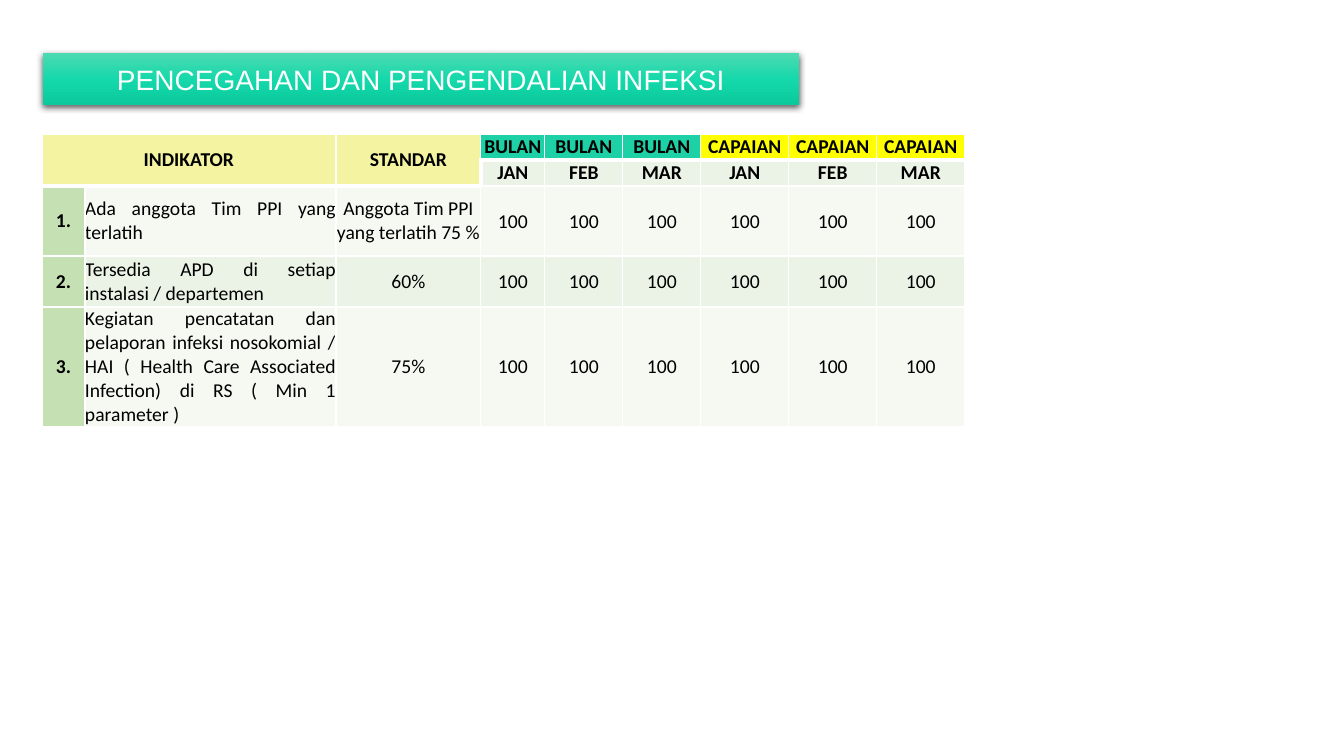
from dataclasses import dataclass
from typing import Any

import lxml.etree
import pptx
import pptx.dml.color
import pptx.enum.text
import pptx.oxml
import pptx.oxml.ns
import pptx.util

RGBColor = pptx.dml.color.RGBColor
Align = pptx.enum.text.PP_ALIGN
Anchor = pptx.enum.text.MSO_ANCHOR

EMU_PER_PX = 914400 / 100.8

WHITE = RGBColor(0xFF, 0xFF, 0xFF)
BLACK = RGBColor(0x00, 0x00, 0x00)
PALE_YELLOW = RGBColor(0xF3, 0xF3, 0xA1)
TEAL = RGBColor(0x1E, 0xD0, 0xA6)
YELLOW = RGBColor(0xFF, 0xFF, 0x00)
LIGHT_GREEN = RGBColor(0xEA, 0xF3, 0xE5)
PALE_GREEN = RGBColor(0xF5, 0xF9, 0xF2)
NUMBER_GREEN = RGBColor(0xC5, 0xE0, 0xB3)
BANNER_STOPS = {
    0: RGBColor(0x4E, 0xDA, 0xB1),
    50: RGBColor(0x15, 0xD9, 0xAB),
    100: RGBColor(0x0B, 0xC9, 0x9C),
}

COLUMN_WIDTHS = [43, 251, 145, 64, 78, 78, 88, 88, 88]
ROW_HEIGHTS = [26, 26, 70, 51, 117]
FIRST_MONTH_COLUMN = 3
HEADER_ROWS = 2
MONTHS = ["JAN", "FEB", "MAR"]


@dataclass(frozen=True)
class Indicator:
    name: str
    standard: str
    scores: tuple[int, ...] = (100,) * 6


@dataclass(frozen=True)
class CellLook:
    text: str
    fill: RGBColor
    bold: bool = False
    alignment: Any = Align.CENTER
    inset: int = 0


INDICATORS = [
    Indicator("Ada anggota Tim PPI yang terlatih", "Anggota Tim PPI yang terlatih 75 %"),
    Indicator("Tersedia APD di setiap instalasi / departemen", "60%"),
    Indicator(
        "Kegiatan pencatatan dan pelaporan infeksi nosokomial / HAI "
        "( Health Care Associated Infection) di RS ( Min 1 parameter )",
        "75%",
    ),
]


def px(length: int) -> int:
    return round(length * EMU_PER_PX)


def apply_format(target: Any, values: dict[str, Any]) -> None:
    for attribute, value in values.items():
        setattr(target, attribute, value)


def write_text(frame: Any, text: str, alignment: Any, color: RGBColor, font: dict[str, Any]) -> None:
    paragraph = frame.paragraphs[0]
    paragraph.alignment = alignment
    run = paragraph.add_run()
    run.text = text
    apply_format(run.font, font)
    run.font.color.rgb = color


def add_xml(parent: Any, xml: str) -> None:
    parent.append(pptx.oxml.parse_xml(xml))


def draw_heading(slide: Any) -> None:
    heading = slide.shapes.title
    apply_format(heading, {"left": px(43), "top": px(53), "width": px(756), "height": px(52)})
    namespace = pptx.oxml.ns.nsdecls("a")
    stops = "".join(
        f'<a:gs pos="{position * 1000}"><a:srgbClr val="{color}"/></a:gs>'
        for position, color in BANNER_STOPS.items()
    )
    properties = heading._element.spPr
    add_xml(properties, f'<a:prstGeom {namespace} prst="roundRect"><a:avLst/></a:prstGeom>')
    add_xml(
        properties,
        f'<a:gradFill {namespace} rotWithShape="1"><a:gsLst>{stops}</a:gsLst>'
        '<a:lin ang="5400000" scaled="0"/></a:gradFill>',
    )
    add_xml(
        properties,
        f'<a:effectLst {namespace}><a:outerShdw blurRad="{pptx.util.Pt(4.5)}" '
        f'dist="{pptx.util.Pt(1.5)}" dir="5400000" algn="ctr" rotWithShape="0">'
        f'<a:srgbClr val="{BLACK}"><a:alpha val="63000"/></a:srgbClr>'
        "</a:outerShdw></a:effectLst>",
    )
    frame = heading.text_frame
    apply_format(frame, {
        "word_wrap": True,
        "auto_size": pptx.enum.text.MSO_AUTO_SIZE.NONE,
        "vertical_anchor": Anchor.MIDDLE,
        "margin_left": px(10),
        "margin_right": px(10),
        "margin_top": px(10),
        "margin_bottom": px(10),
    })
    write_text(frame, "PENCEGAHAN DAN PENGENDALIAN INFEKSI", Align.CENTER, WHITE,
               {"name": "Arial", "size": pptx.util.Pt(20), "bold": False})


def border_widths(row: int, column: int) -> dict[str, int]:
    label_column = column < FIRST_MONTH_COLUMN
    heavy = {
        "lnL": (row, column) == (1, FIRST_MONTH_COLUMN),
        "lnR": False,
        "lnT": row == 1 or (row == HEADER_ROWS and label_column),
        "lnB": row == 0 or (row == 1 and label_column),
    }
    return {side: 3 if is_heavy else 1 for side, is_heavy in heavy.items()}


def draw_cell(cell: Any, look: CellLook, row: int, column: int) -> None:
    properties = cell._tc.get_or_add_tcPr()
    for side, width in border_widths(row, column).items():
        line = lxml.etree.SubElement(
            properties, pptx.oxml.ns.qn(f"a:{side}"), w=str(pptx.util.Pt(width)))
        solid = lxml.etree.SubElement(line, pptx.oxml.ns.qn("a:solidFill"))
        lxml.etree.SubElement(solid, pptx.oxml.ns.qn("a:srgbClr"), val=str(WHITE))
    cell.fill.solid()
    cell.fill.fore_color.rgb = look.fill
    apply_format(cell, {
        "vertical_anchor": Anchor.MIDDLE,
        "margin_left": px(look.inset),
        "margin_right": px(look.inset),
        "margin_top": px(look.inset),
        "margin_bottom": 0,
    })
    if look.text:
        write_text(cell.text_frame, look.text, look.alignment, BLACK,
                   {"name": "Calibri", "size": pptx.util.Pt(14), "bold": look.bold})


def indicator_rows() -> list[list[CellLook]]:
    covered = CellLook("", PALE_YELLOW)
    rows = [
        [CellLook("INDIKATOR", PALE_YELLOW, True), covered, CellLook("STANDAR", PALE_YELLOW, True)]
        + [CellLook("BULAN", TEAL, True) for _ in MONTHS]
        + [CellLook("CAPAIAN", YELLOW, True) for _ in MONTHS],
        [covered] * FIRST_MONTH_COLUMN
        + [CellLook(month, LIGHT_GREEN, True) for month in MONTHS * 2],
    ]
    for number, indicator in enumerate(INDICATORS, start=1):
        band = PALE_GREEN if number % 2 else LIGHT_GREEN
        rows.append(
            [
                CellLook(f"{number}.", NUMBER_GREEN, True),
                CellLook(indicator.name, band, alignment=Align.JUSTIFY),
                CellLook(indicator.standard, band),
            ]
            + [CellLook(str(score), band, inset=1) for score in indicator.scores]
        )
    return rows


def draw_indicators(slide: Any) -> None:
    table = slide.shapes.add_table(
        len(ROW_HEIGHTS), len(COLUMN_WIDTHS), px(42), px(134),
        px(sum(COLUMN_WIDTHS)), px(sum(ROW_HEIGHTS)),
    ).table
    apply_format(table, {"first_row": False, "horz_banding": False})
    for column, width in zip(table.columns, COLUMN_WIDTHS):
        column.width = px(width)
    for row, height in zip(table.rows, ROW_HEIGHTS):
        row.height = px(height)
    for row_index, looks in enumerate(indicator_rows()):
        for column_index, look in enumerate(looks):
            draw_cell(table.cell(row_index, column_index), look, row_index, column_index)
    table.cell(0, 0).merge(table.cell(1, 1))
    table.cell(0, 2).merge(table.cell(1, 2))


def main() -> None:
    presentation = pptx.Presentation()
    apply_format(presentation, {"slide_width": px(1344), "slide_height": px(756)})
    slide = presentation.slides.add_slide(presentation.slide_layouts[5])
    draw_heading(slide)
    draw_indicators(slide)
    presentation.save("out.pptx")


if __name__ == "__main__":
    main()
